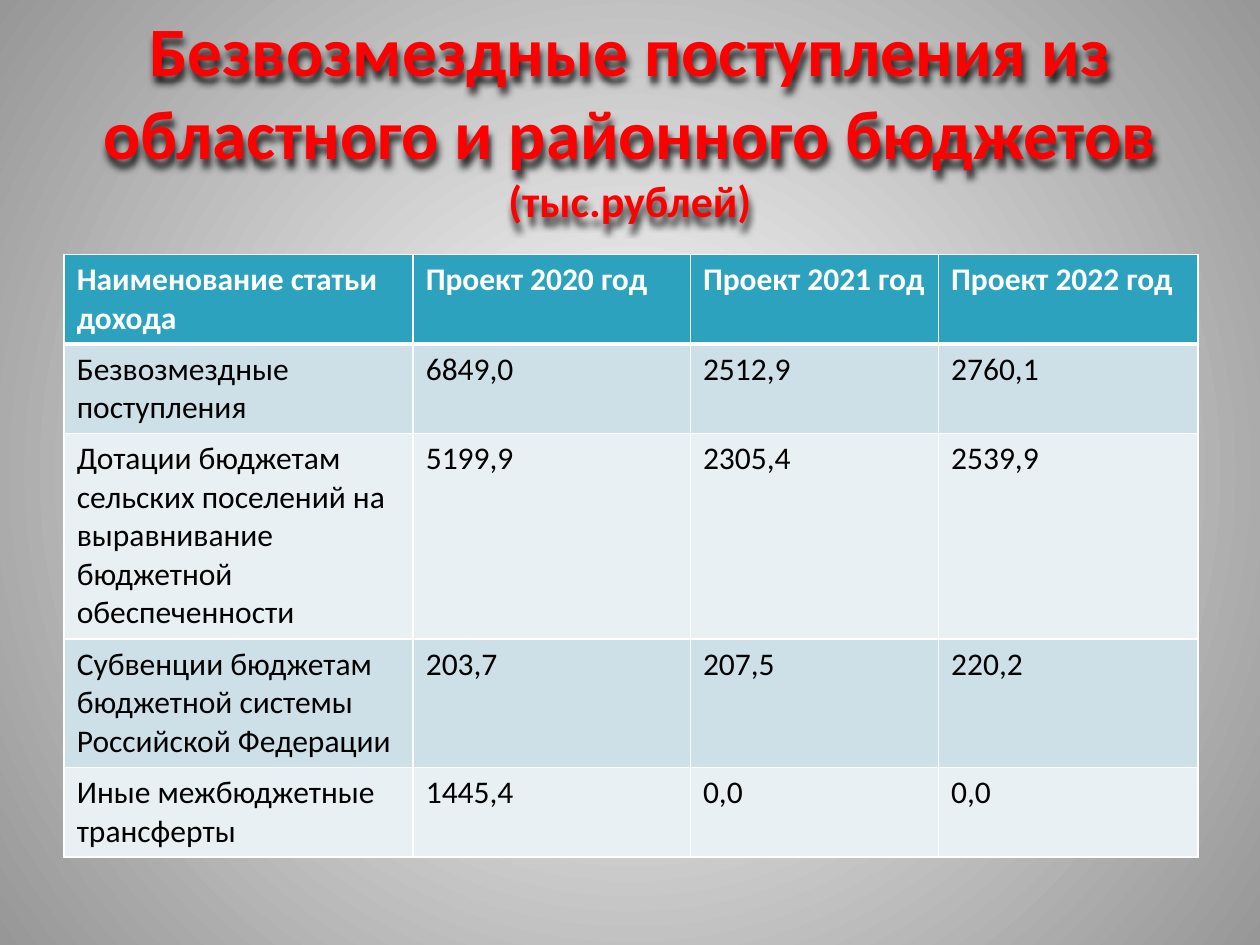
import pptx
import pptx.util
import pptx.dml.color
import pptx.enum.text
import pptx.oxml
import pptx.oxml.ns

Inches, Pt, Color = pptx.util.Inches, pptx.util.Pt, pptx.dml.color.RGBColor

# Content
TITLE = [("Безвозмездные поступления из областного и районного бюджетов ", 39.6),
         ("(тыс.рублей)", 25.2)]
ROWS = [
    ("Наименование статьи дохода", "Проект 2020 год", "Проект 2021 год", "Проект 2022 год"),
    ("Безвозмездные поступления", "6849,0", "2512,9", "2760,1"),
    ("Дотации бюджетам сельских поселений на выравнивание бюджетной обеспеченности",
     "5199,9", "2305,4", "2539,9"),
    ("Субвенции бюджетам бюджетной системы Российской Федерации", "203,7", "207,5", "220,2"),
    ("Иные межбюджетные трансферты", "1445,4", "0,0", "0,0"),
]

# Layout and colours
COLUMN_WIDTHS = [2.77, 2.2, 1.97, 2.06]
ROW_HEIGHTS = [0.71, 0.71, 1.63, 1.02, 0.71]
FONT = "Calibri"
RED = Color(0xFF, 0x00, 0x00)
WHITE = Color(0xFF, 0xFF, 0xFF)
BLACK = Color(0x00, 0x00, 0x00)
GREY = Color(0x97, 0x97, 0x97)
TEAL = Color(0x2D, 0xA2, 0xBF)
BANDS = [Color(0xE8, 0xF0, 0xF4), Color(0xCD, 0xE0, 0xE8)]
NAMESPACE = pptx.oxml.ns.nsdecls("a")


def add_text(para, text, size=18, color=BLACK, bold=False):
    span = para.add_run()
    span.text = text
    span.font.name, span.font.size = FONT, Pt(size)
    span.font.color.rgb, span.font.bold = color, bold


def add_borders(cell, bottom):
    properties = cell._tc.get_or_add_tcPr()
    widths = {"lnL": 1, "lnR": 1, "lnT": 1, "lnB": bottom}
    for index, (side, width) in enumerate(widths.items()):
        properties.insert(index, pptx.oxml.parse_xml(
            f'<a:{side} {NAMESPACE} w="{Pt(width)}"><a:solidFill>'
            f'<a:srgbClr val="{WHITE}"/></a:solidFill></a:{side}>'))


deck = pptx.Presentation()
deck.slide_width, deck.slide_height = Inches(10), Inches(7.5)
page = deck.slides.add_slide(deck.slide_layouts[5])

# Radial background
fill = page.background.fill
fill.gradient()
for stop, color in zip(fill.gradient_stops, (WHITE, GREY)):
    stop.color.rgb = color
gradient = page.element.find(".//" + pptx.oxml.ns.qn("a:gradFill"))
linear = gradient.find(pptx.oxml.ns.qn("a:lin"))
gradient.replace(linear, pptx.oxml.parse_xml(
    f'<a:path {NAMESPACE} path="circle">'
    '<a:fillToRect l="50000" t="50000" r="50000" b="50000"/></a:path>'))

# Title with a soft shadow
title = page.shapes.title
title.left, title.top, title.width, title.height = map(Inches, (0.5, 0.3, 9, 1.25))
frame = title.text_frame
frame.word_wrap = True
frame.auto_size = pptx.enum.text.MSO_AUTO_SIZE.NONE
frame.vertical_anchor = pptx.enum.text.MSO_ANCHOR.MIDDLE
para = frame.paragraphs[0]
para.alignment = pptx.enum.text.PP_ALIGN.CENTER
for text, size in TITLE:
    add_text(para, text, size=size, color=RED, bold=True)
title.element.spPr.append(pptx.oxml.parse_xml(
    f'<a:effectLst {NAMESPACE}><a:outerShdw blurRad="{Pt(4)}" dist="{Pt(4)}" dir="5400000">'
    f'<a:srgbClr val="{BLACK}"><a:alpha val="80000"/></a:srgbClr></a:outerShdw></a:effectLst>'))

# Income table
table = page.shapes.add_table(
    len(ROWS), len(COLUMN_WIDTHS), Inches(0.51), Inches(2.02),
    Inches(sum(COLUMN_WIDTHS)), Inches(sum(ROW_HEIGHTS))).table
for column, width in zip(table.columns, COLUMN_WIDTHS):
    column.width = Inches(width)
for row_index, (row, height, texts) in enumerate(zip(table.rows, ROW_HEIGHTS, ROWS)):
    row.height = Inches(height)
    header = row_index == 0
    for cell, text in zip(row.cells, texts):
        cell.fill.solid()
        cell.fill.fore_color.rgb = TEAL if header else BANDS[row_index % 2]
        add_borders(cell, bottom=3 if header else 1)
        add_text(cell.text_frame.paragraphs[0], text,
                 color=WHITE if header else BLACK, bold=header)

deck.save("out.pptx")
